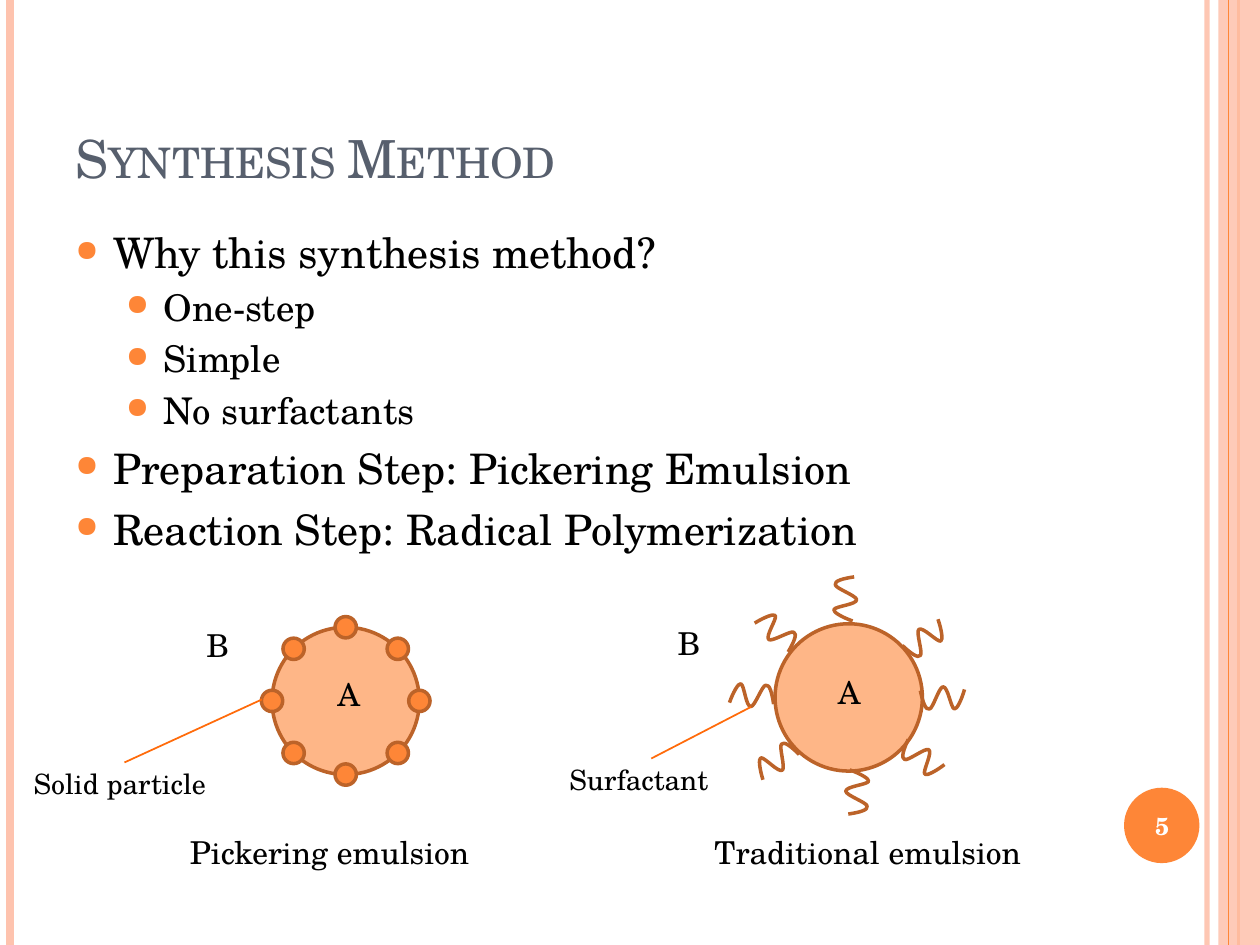
from math import cos, pi, sin
from typing import NamedTuple

from lxml.etree import SubElement
from pptx import Presentation
from pptx.dml.color import RGBColor
from pptx.enum.shapes import MSO_CONNECTOR, MSO_SHAPE
from pptx.enum.text import MSO_ANCHOR, PP_ALIGN
from pptx.oxml.ns import qn
from pptx.util import Cm, Pt

FONT = "TeX Gyre Schola"
BLACK, WHITE, SLATE = "000000", "FFFFFF", "575F6D"
ORANGE, PINK, PEACH, BROWN, POINTER = "FE8637", "FEC3AE", "FEB687", "BC6329", "FF6B0A"
WIDTH, HEIGHT = 25.4, 19.05
DROPLET_SIZE, PARTICLE_SIZE, PARTICLE_COUNT = 2.97, 0.43, 8
SQUIGGLE = [
    (0.15, 0.43), (-0.05, 0.36), (-0.25, 0.25), (-0.23, 0.2), (-0.2, 0.13),
    (0.23, 0.1), (0.23, 0), (0.23, -0.08), (-0.2, -0.23), (-0.2, -0.3),
    (-0.23, -0.38), (-0.03, -0.43), (0.18, -0.46),
]


class Box(NamedTuple):
    left: float
    top: float
    width: float
    height: float


class Label(NamedTuple):
    text: str
    box: Box
    size: float = 18
    color: str = BLACK


class Line(NamedTuple):
    start: tuple[float, float]
    end: tuple[float, float]
    color: str
    width: float
    opacity: int = 100


class Bullet(NamedTuple):
    text: str
    level: int = 0


class BulletStyle(NamedTuple):
    size: float
    indent: float
    space_before: float
    bullet_percent: int


class Surfactant(NamedTuple):
    x: float
    y: float
    rotation: float


BULLET_STYLES = [BulletStyle(24, 0.76, 6, 70), BulletStyle(21, 1.78, 4.2, 80)]
BULLETS = [
    Bullet("Why this synthesis method?"),
    Bullet("One-step", 1),
    Bullet("Simple", 1),
    Bullet("No surfactants", 1),
    Bullet("Preparation Step: Pickering Emulsion"),
    Bullet("Reaction Step: Radical Polymerization"),
]
LABELS = [
    Label("Solid particle", Box(0.43, 15.32, 4.65, 0.94), 16),
    Label("A", Box(6.55, 13.49, 0.64, 1.02)),
    Label("B", Box(3.91, 12.5, 0.74, 1.02)),
    Label("Pickering emulsion", Box(3.58, 16.66, 6.55, 1.02)),
    Label("A", Box(16.64, 13.44, 0.84, 1.02)),
    Label("B", Box(13.41, 12.45, 0.74, 1.02)),
    Label("Surfactant", Box(11.23, 15.24, 3.81, 0.94), 16),
    Label("Traditional emulsion", Box(14.15, 16.66, 7.8, 1.02)),
]
SURFACTANTS = [
    Surfactant(17.04, 12.09, 0),
    Surfactant(17.3, 15.98, 180),
    Surfactant(15.16, 14.02, 90),
    Surfactant(15.67, 12.73, 128.8),
    Surfactant(18.67, 12.9, 231.6),
    Surfactant(19.02, 14.1, 266.4),
    Surfactant(18.59, 15.32, 302.9),
    Surfactant(15.65, 15.34, 53.1),
]


def set_color(color_format, color: str, opacity: int = 100) -> None:
    """Apply a hex colour to a fill, line or font, with optional opacity."""
    target = getattr(color_format, "fore_color", None) or color_format.color
    target.rgb = RGBColor.from_string(color)
    if opacity < 100:
        for element in color_format._xPr.iter(qn("a:srgbClr")):
            SubElement(element, qn("a:alpha"), val=str(opacity * 1000))


def add_line(slide, line: Line) -> None:
    """Draw a straight connector without a shadow."""
    connector = slide.shapes.add_connector(
        MSO_CONNECTOR.STRAIGHT, *map(Cm, line.start + line.end)
    )
    connector.line.width = Pt(line.width)
    connector.line.fill.solid()
    set_color(connector.line.fill, line.color, line.opacity)
    SubElement(connector._element.spPr, qn("a:effectLst"))


def add_filled(slide, kind, box: Box, color: str, outline: str = "", opacity: int = 100) -> None:
    """Draw a filled preset shape, outlined only when a colour is given."""
    shape = slide.shapes.add_shape(kind, *map(Cm, box))
    shape.shadow.inherit = False
    shape.fill.solid()
    set_color(shape.fill, color, opacity)
    if outline:
        shape.line.width = Pt(2)
        set_color(shape.line, outline)
    else:
        shape.line.fill.background()


def add_disc(slide, x: float, y: float, size: float, color: str) -> None:
    """Draw an outlined disc around a centre point."""
    box = Box(x - size / 2, y - size / 2, size, size)
    add_filled(slide, MSO_SHAPE.FLOWCHART_CONNECTOR, box, color, BROWN)


def format_runs(paragraph, size: float, color: str) -> None:
    """Set the font of every run in a paragraph."""
    for run in paragraph.runs:
        run.font.name = FONT
        run.font.size = Pt(size)
        set_color(run.font, color)


def add_label(slide, label: Label):
    """Add a wrapping text box and return its text frame."""
    text_frame = slide.shapes.add_textbox(*map(Cm, label.box)).text_frame
    text_frame.word_wrap = True
    text_frame.text = label.text
    format_runs(text_frame.paragraphs[0], label.size, label.color)
    return text_frame


def add_bullets(slide, box: Box, bullets: list[Bullet]) -> None:
    """Add the two-level bulleted list."""
    text_frame = slide.shapes.add_textbox(*map(Cm, box)).text_frame
    text_frame.word_wrap = True
    text_frame.text = "\n".join(bullet.text for bullet in bullets)
    for paragraph, bullet in zip(text_frame.paragraphs, bullets):
        style = BULLET_STYLES[bullet.level]
        paragraph.level = bullet.level
        paragraph.space_before = Pt(style.space_before)
        format_runs(paragraph, style.size, BLACK)
        properties = paragraph._p.get_or_add_pPr()
        properties.set("marL", str(Cm(style.indent)))
        properties.set("indent", str(-Cm(0.76)))
        bullet_color = SubElement(properties, qn("a:buClr"))
        SubElement(bullet_color, qn("a:srgbClr"), val=ORANGE)
        SubElement(properties, qn("a:buSzPct"), val=str(style.bullet_percent * 1000))
        SubElement(properties, qn("a:buChar"), char="●")


def add_surfactant(slide, surfactant: Surfactant) -> None:
    """Draw a rotated wavy tail made of Bezier curves."""
    points = [(Cm(surfactant.x + x), Cm(surfactant.y + y)) for x, y in SQUIGGLE]
    builder = slide.shapes.build_freeform(*points[0])
    builder.add_line_segments(points[1:], close=False)
    shape = builder.convert_to_shape()
    outline = next(shape._element.iter(qn("a:path")))
    segments = outline.findall(qn("a:lnTo"))
    for index in range(0, len(segments), 3):
        curve = SubElement(outline, qn("a:cubicBezTo"))
        for segment in segments[index:index + 3]:
            curve.append(segment[0])
            outline.remove(segment)
    shape.shadow.inherit = False
    shape.fill.background()
    shape.line.width = Pt(2)
    set_color(shape.line, BROWN)
    shape.rotation = surfactant.rotation


def add_frame(slide) -> None:
    """Draw the side stripes and the page number badge."""
    add_line(slide, Line((24.33, 0), (24.33, HEIGHT), PINK, 3, 93))
    add_line(slide, Line((0.2, 0), (0.2, HEIGHT), PINK, 4.5))
    add_line(slide, Line((24.97, 0), (24.97, HEIGHT), ORANGE, 1.5))
    add_filled(slide, MSO_SHAPE.RECTANGLE, Box(24.56, 0, 0.84, HEIGHT), PINK, opacity=87)
    add_line(slide, Line((24.77, 0), (24.77, HEIGHT), ORANGE, 0.75))
    add_filled(slide, MSO_SHAPE.OVAL, Box(22.66, 15.88, 1.52, 1.52), ORANGE)
    number = add_label(slide, Label("5", Box(22.58, 15.93, 1.7, 1.45), 14, WHITE))
    number.vertical_anchor = MSO_ANCHOR.MIDDLE
    number.paragraphs[0].alignment = PP_ALIGN.CENTER
    number.paragraphs[0].runs[0].font.bold = True


def add_droplets(slide) -> None:
    """Draw the particle-covered and surfactant-covered droplets."""
    x, y, radius = 6.97, 14.13, DROPLET_SIZE / 2
    add_disc(slide, x, y, DROPLET_SIZE, PEACH)
    for index in range(PARTICLE_COUNT):
        angle = 2 * pi * index / PARTICLE_COUNT
        add_disc(slide, x + radius * cos(angle), y + radius * sin(angle), PARTICLE_SIZE, ORANGE)
    add_line(slide, Line((5.28, 14.1), (2.51, 15.37), POINTER, 1))
    add_disc(slide, 17.11, 14.06, DROPLET_SIZE, PEACH)
    for surfactant in SURFACTANTS:
        add_surfactant(slide, surfactant)
    add_line(slide, Line((15.14, 14.25), (13.13, 15.29), POINTER, 1))


def main() -> None:
    """Build the slide and save it."""
    presentation = Presentation()
    presentation.slide_width, presentation.slide_height = Cm(WIDTH), Cm(HEIGHT)
    slide = presentation.slides.add_slide(presentation.slide_layouts[6])
    add_frame(slide)
    title = add_label(slide, Label("Synthesis Method", Box(1.27, 0.76, 20.75, 3.18), 30, SLATE))
    title.vertical_anchor = MSO_ANCHOR.BOTTOM
    title.paragraphs[0].runs[0].font._element.set("cap", "small")
    add_bullets(slide, Box(1.27, 4.45, 20.75, 13.54), BULLETS)
    add_droplets(slide)
    for label in LABELS:
        add_label(slide, label)
    presentation.save("out.pptx")


if __name__ == "__main__":
    main()
